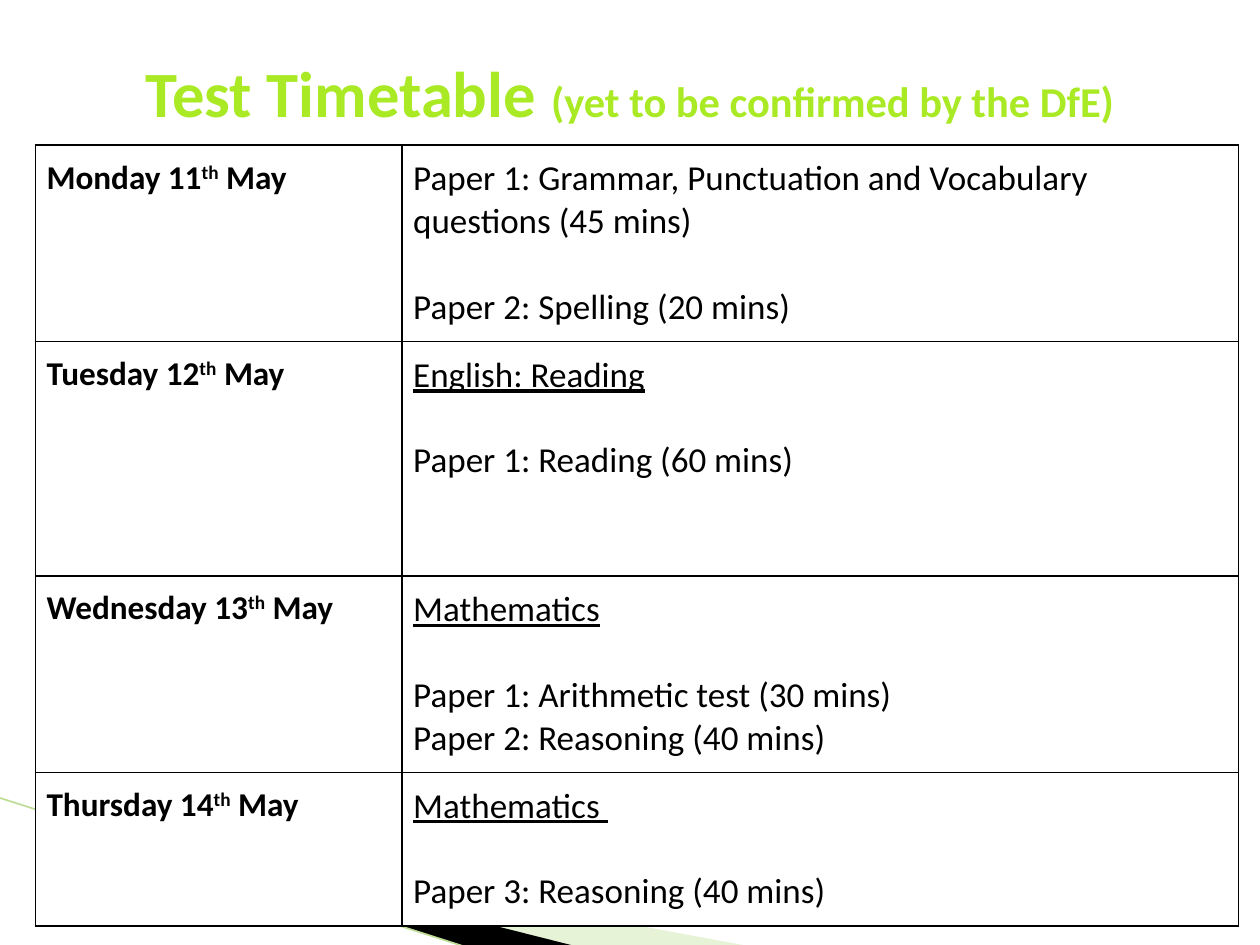
import pptx
import pptx.dml.color
import pptx.enum.shapes
import pptx.enum.text
import pptx.oxml
import pptx.oxml.ns
import pptx.util
from pptx.util import Inches, Pt

FONT = "Calibri"
BLACK, WHITE, LIME, PALE = "000000", "FFFFFF", "AAEA25", "C3E19D"

TITLE = [("Test Timetable ", 36.9), ("(yet to be confirmed by the DfE)", 24.3)]
# Day, row height, groups of lines, whether the first line is a subject heading
TIMETABLE = [
    ("Monday 11", 1.56, [["Paper 1: Grammar, Punctuation and Vocabulary questions (45 mins)"],
                         ["Paper 2: Spelling (20 mins)"]], False),
    ("Tuesday 12", 1.86, [["English: Reading"], ["Paper 1: Reading (60 mins)"]], True),
    ("Wednesday 13", 1.56, [["Mathematics"], ["Paper 1: Arithmetic test (30 mins)",
                                              "Paper 2: Reasoning (40 mins)"]], True),
    ("Thursday 14", 1.21, [["Mathematics "], ["Paper 3: Reasoning (40 mins)"]], True),
]
COLUMN_WIDTHS = [2.91, 6.64]
GROUP_GAP = 24.4
WEDGES = [
    ([(0.55, 6.51), (5.95, 7.51), (4.56, 7.51), (0.55, 6.5)], PALE, 40),
    ([(0.53, 6.49), (4.57, 7.51), (3.72, 7.52), (0.54, 6.5)], BLACK, 100),
]


def color(value):
    return pptx.dml.color.RGBColor.from_string(value)


def add_xml(parent, tag, content="", attributes=""):
    namespace = pptx.oxml.ns.nsdecls("a")
    parent.append(pptx.oxml.parse_xml(f"<a:{tag} {namespace} {attributes}>{content}</a:{tag}>"))


def add_run(paragraph, text, hue=BLACK, superscript=False, **formats):
    run = paragraph.add_run()
    run.text = text
    run.font.color.rgb = color(hue)
    for name, value in {"name": FONT, **formats}.items():
        setattr(run.font, name, value)
    if superscript:
        run.font._element.set("baseline", "30000")


def add_wedge(slide, points, hue, opacity):
    corners = [(Inches(x), Inches(y)) for x, y in points]
    builder = slide.shapes.build_freeform(*corners[0], scale=1.0)
    builder.add_line_segments(corners[1:], close=True)
    shape = builder.convert_to_shape()
    shape.shadow.inherit = False
    shape.fill.solid()
    shape.fill.fore_color.rgb = color(hue)
    shape.line.fill.background()
    if opacity < 100:
        fill_color = shape._element.spPr.find(".//" + pptx.oxml.ns.qn("a:srgbClr"))
        add_xml(fill_color, "alpha", attributes=f'val="{opacity * 1000}"')


def add_edge_line(slide):
    line = slide.shapes.add_connector(
        pptx.enum.shapes.MSO_CONNECTOR.STRAIGHT,
        Inches(-0.01), Inches(6.33), Inches(3.71), Inches(7.52))
    line.line.color.rgb = color("BDDC94")
    line.line.width = Pt(0.95)
    add_xml(line._element.spPr, "effectLst")


def style_cell(cell):
    """Give a cell its margins, black borders and white fill."""
    margins = {"margin_left": 0.09, "margin_top": 0.1, "margin_right": 0.1, "margin_bottom": 0.1}
    for name, value in margins.items():
        setattr(cell, name, Inches(value))
    properties = cell._tc.get_or_add_tcPr()
    for side in ("lnL", "lnR", "lnT", "lnB"):
        add_xml(properties, side, f'<a:solidFill><a:srgbClr val="{BLACK}"/></a:solidFill>',
                f'w="{Pt(1)}"')
    cell.fill.solid()
    cell.fill.fore_color.rgb = color(WHITE)


def fill_day(cell, day):
    paragraph = cell.text_frame.paragraphs[0]
    for text, superscript in ((day, False), ("th", True), (" May", False)):
        add_run(paragraph, text, superscript=superscript, size=Pt(19), bold=True)


def fill_papers(cell, groups, has_heading):
    frame = cell.text_frame
    for group_index, group in enumerate(groups):
        for line_index, text in enumerate(group):
            is_first = group_index == line_index == 0
            paragraph = frame.paragraphs[0] if is_first else frame.add_paragraph()
            if line_index == 0 and not is_first:
                paragraph.space_before = Pt(GROUP_GAP)
            add_run(paragraph, text, size=Pt(20), bold=False, underline=is_first and has_heading)


def add_timetable(slide):
    heights = [row[1] for row in TIMETABLE]
    table = slide.shapes.add_table(
        len(TIMETABLE), len(COLUMN_WIDTHS), Inches(0.28), Inches(1.15),
        Inches(sum(COLUMN_WIDTHS)), Inches(sum(heights))).table
    table.first_row = table.horz_banding = False
    for column, width in zip(table.columns, COLUMN_WIDTHS):
        column.width = Inches(width)
    for row, (day, height, groups, has_heading) in zip(table.rows, TIMETABLE):
        row.height = Inches(height)
        for cell in row.cells:
            style_cell(cell)
        fill_day(row.cells[0], day)
        fill_papers(row.cells[1], groups, has_heading)


def add_title(slide):
    box = slide.shapes.add_textbox(Inches(0.5), Inches(0.3), Inches(9), Inches(0.85))
    frame = box.text_frame
    frame.word_wrap = True
    frame.vertical_anchor = pptx.enum.text.MSO_ANCHOR.MIDDLE
    paragraph = frame.paragraphs[0]
    paragraph.alignment = pptx.enum.text.PP_ALIGN.CENTER
    for text, size in TITLE:
        add_run(paragraph, text, LIME, size=Pt(size), bold=True)


def main():
    presentation = pptx.Presentation()
    presentation.slide_width, presentation.slide_height = Inches(10), Inches(7.5)
    slide = presentation.slides.add_slide(presentation.slide_layouts[6])
    for wedge in WEDGES:
        add_wedge(slide, *wedge)
    add_edge_line(slide)
    add_timetable(slide)
    add_title(slide)
    presentation.save("out.pptx")


if __name__ == "__main__":
    main()
